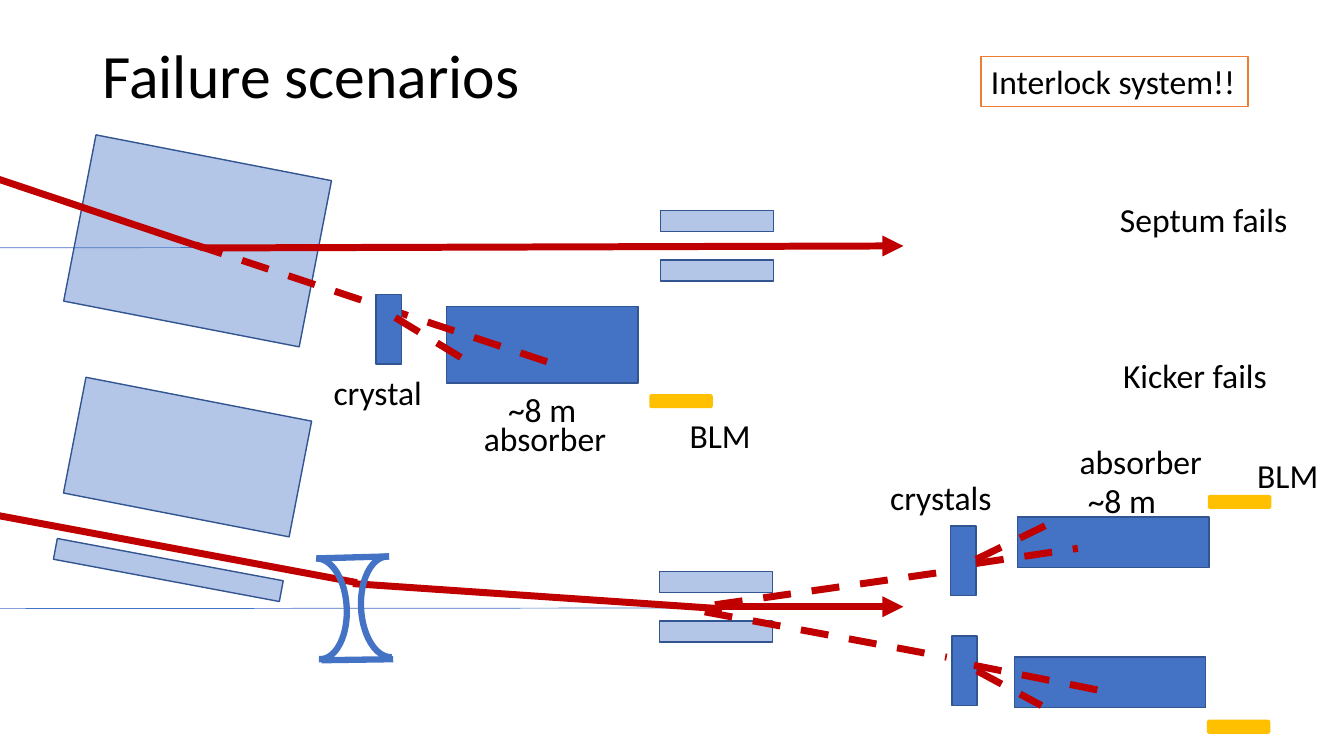
from lxml import etree
from pptx import Presentation
from pptx import util as u
from pptx.dml.color import RGBColor
from pptx.enum import dml, shapes, text
from pptx.oxml.ns import qn

PX = 9144  # EMU per px, 100 px to the inch
COLORS = {
    "blue": "4472C4", "edge": "325491", "beam": "C00000", "monitor": "FFC000",
    "alert": "ED7D31", "white": "FFFFFF", "black": "000000",
}
RECT = shapes.MSO_SHAPE.RECTANGLE


def rgb(name):
    return RGBColor.from_string(COLORS[name])


def px(*lengths):
    return [u.Emu(n * PX) for n in lengths]


def add_block(s, x, y, w, h, fill="blue", edge="edge", kind=RECT, rot=0, alpha=None):
    sp = s.shapes.add_shape(kind, *px(x, y, w, h))
    sp.shadow.inherit = False
    sp.rotation = rot
    sp.fill.solid()
    sp.fill.fore_color.rgb = rgb(fill)
    if alpha:
        color = sp.fill._xPr.find(qn("a:solidFill"))[0]
        etree.SubElement(color, qn("a:alpha")).set("val", str(alpha * 1000))
    if edge:
        sp.line.color.rgb = rgb(edge)
        sp.line.width = u.Pt(1)
    else:
        sp.line.fill.background()
    return sp


def add_magnet(s, x, y, w, h, rot=0):
    return add_block(s, x, y, w, h, rot=rot, alpha=40)


def add_kicker(s, x, y):
    for plate_y in (y, y + 49):
        add_magnet(s, x, plate_y, 112, 21)


def add_crystal(s, x, y):
    return add_block(s, x, y, 25, 69)


def add_monitor(s, x, y):
    add_block(s, x, y, 63, 14, "monitor", None, shapes.MSO_SHAPE.ROUNDED_RECTANGLE)


def add_line(s, x1, y1, x2, y2, color="beam", width=5, dashed=False, arrow=False):
    c = s.shapes.add_connector(shapes.MSO_CONNECTOR.STRAIGHT, *px(x1, y1, x2, y2))
    c.line.color.rgb = rgb(color)
    c.line.width = u.Pt(width)
    if dashed:
        c.line.dash_style = dml.MSO_LINE.DASH
    if arrow:  # arrowhead sits at the start point
        etree.SubElement(c.line._get_or_add_ln(), qn("a:headEnd")).set("type", "triangle")
    etree.SubElement(c._element.spPr, qn("a:effectLst"))
    return c


def add_lens(s):
    for x, y, rot in ((288, 554, 357.3), (358, 552, 177.3)):
        sp = s.shapes.add_shape(shapes.MSO_SHAPE.ARC, *px(x, y, 56, 100))
        sp.shadow.inherit = False
        sp.adjustments[0] = 162
        sp.adjustments[1] = 55.32
        sp.rotation = rot
        sp.fill.background()
        sp.line.color.rgb = rgb("blue")
        sp.line.width = u.Pt(4.5)
    add_line(s, 314, 554, 386, 552, "blue", 4.5)
    add_line(s, 319, 655, 390, 654, "blue", 4.5)


def set_text(sp, words, size=24):
    tf = sp.text_frame
    tf.word_wrap = False
    tf.vertical_anchor = text.MSO_ANCHOR.TOP
    p = tf.paragraphs[0]
    p.text = words
    p.alignment = text.PP_ALIGN.LEFT
    p.font.name = "Calibri"
    p.font.size = u.Pt(size)
    p.font.color.rgb = rgb("black")
    return p


def add_label(s, x, y, w, words):
    sp = s.shapes.add_textbox(*px(x, y, w, 50))
    set_text(sp, words)
    sp.text_frame.auto_size = text.MSO_AUTO_SIZE.SHAPE_TO_FIT_TEXT


def add_title(s, words):
    sp = s.shapes.add_textbox(*px(92, 40, 1150, 145))
    p = set_text(sp, words, 44)
    p.line_spacing = 0.9
    sp.text_frame.word_wrap = True


def draw_septum_failure(s):
    add_block(s, 443, 304, 190, 76)  # absorber
    add_line(s, -186, 246, 863, 245, "blue", 0.5)  # axis
    add_magnet(s, 77, 155, 238, 168, 11)  # septum
    add_line(s, 896, 244, 202, 246, arrow=True)
    add_line(s, -162, 124, 202, 246)
    add_line(s, 194, 243, 558, 364, dashed=True)
    add_kicker(s, 655, 209)
    add_crystal(s, 373, 292)
    add_line(s, 392, 315, 466, 360, dashed=True)
    add_monitor(s, 644, 391)


def draw_kicker_failure(s):
    add_line(s, -187, 604, 862, 603, "blue", 0.5)  # axis
    add_kicker(s, 654, 567)
    # Beam through the septum, lens and kicker
    add_line(s, 896, 602, 710, 602, arrow=True)
    add_line(s, 350, 579, 716, 604)
    add_line(s, -154, 483, 354, 578)
    add_magnet(s, 53, 555, 228, 21, 10.6)
    add_magnet(s, 72, 395, 228, 117, 11)
    add_lens(s)
    # Lost beams
    add_line(s, 699, 607, 939, 652, dashed=True)
    add_line(s, 709, 600, 939, 567, dashed=True)
    # Absorbers and crystals
    add_block(s, 1009, 513, 190, 50)
    add_block(s, 1006, 652, 190, 50)
    add_crystal(s, 943, 522)
    lower_crystal = add_crystal(s, 944, 631)
    # Beams deflected by the crystals
    add_line(s, 968, 559, 1069, 544, dashed=True)
    add_line(s, 968, 555, 1042, 519, dashed=True)
    add_line(s, 969, 666, 1033, 700, dashed=True).begin_connect(lower_crystal, 3)
    add_line(s, 966, 660, 1101, 687, dashed=True)
    add_monitor(s, 1198, 491)
    add_monitor(s, 1197, 714)


def main():
    prs = Presentation()
    prs.slide_width, prs.slide_height = px(1333, 750)
    s = prs.slides.add_slide(prs.slide_layouts[6])
    add_title(s, "Failure scenarios")
    draw_septum_failure(s)
    draw_kicker_failure(s)

    # Labels
    for x, y, w, words in (
        (1101, 192, 188, "Septum fails"), (1104, 347, 164, "Kicker fails"),
        (321, 364, 109, "crystal"), (873, 468, 122, "crystals"),
        (494, 381, 89, "~8 m"), (1069, 471, 88, "~8 m"),
        (470, 410, 143, "absorber"), (1061, 433, 143, "absorber"),
        (674, 407, 81, "BLM"), (1237, 446, 81, "BLM"),
    ):
        add_label(s, x, y, w, words)

    # Interlock note
    note = add_block(s, 973, 56, 265, 50, "white", "alert")
    set_text(note, "Interlock system!!")
    prs.save("out.pptx")


if __name__ == "__main__":
    main()
